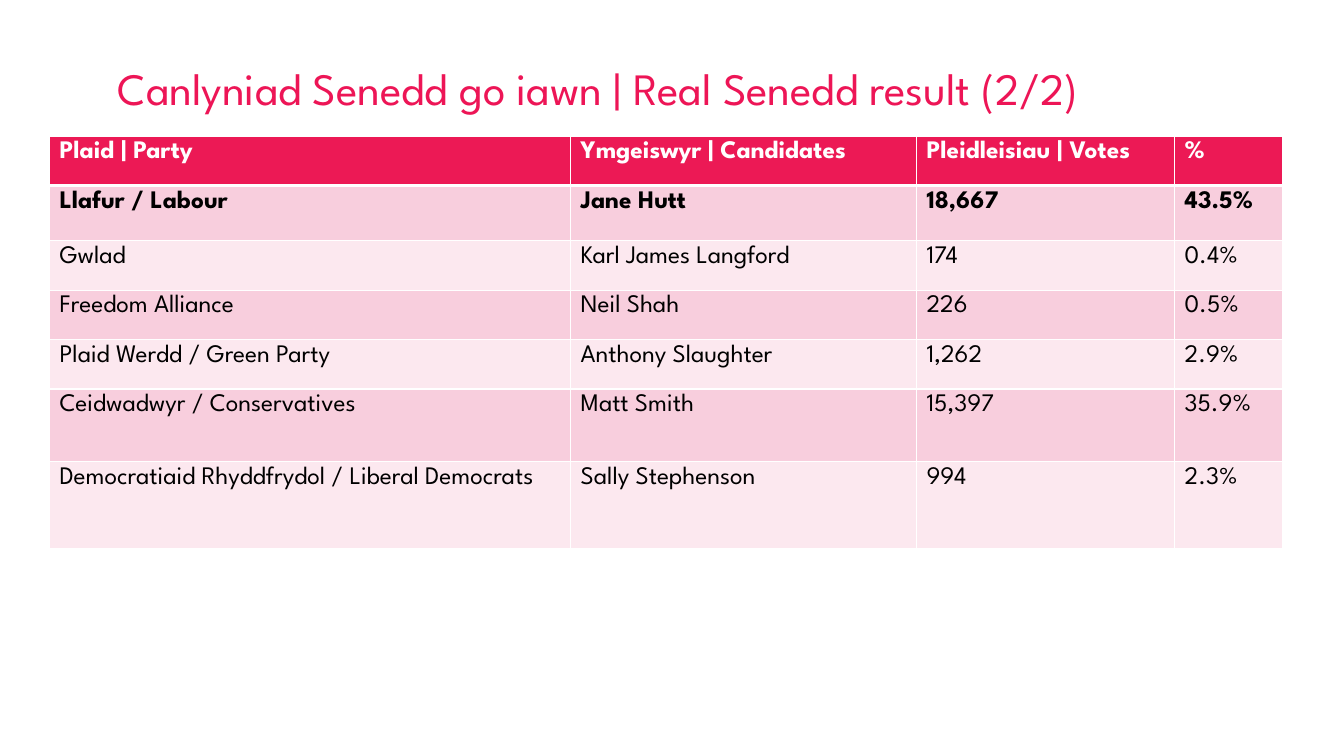
from lxml.etree import SubElement
from pptx import Presentation
from pptx.dml.color import RGBColor
from pptx.oxml.ns import qn
from pptx.util import Inches, Pt

FONT = "League Spartan"
BLACK, WHITE = "000000", "FFFFFF"
TITLE_PINK, HEADER_PINK = "ED1556", "EC1955"
ROW_PINKS = ("F8CEDD", "FCE8EF")

COLUMN_WIDTHS = (5.17, 3.43, 2.56, 1.07)
ROW_HEIGHTS = (0.49, 0.55, 0.49, 0.49, 0.49, 0.72, 0.86)
RESULTS = (
    ("Plaid | Party", "Ymgeiswyr | Candidates", "Pleidleisiau | Votes", "%"),
    ("Llafur / Labour", "Jane Hutt", "18,667", "43.5%"),
    ("Gwlad", "Karl James Langford", "174", "0.4%"),
    ("Freedom Alliance", "Neil Shah", "226", "0.5%"),
    ("Plaid Werdd / Green Party", "Anthony Slaughter", "1,262", "2.9%"),
    ("Ceidwadwyr / Conservatives", "Matt Smith", "15,397", "35.9%"),
    ("Democratiaid Rhyddfrydol / Liberal Democrats", "Sally Stephenson", "994", "2.3%"),
)


def color(hex_string):
    return RGBColor.from_string(hex_string)


def style_font(paragraph, size, hex_string, bold=False):
    font = paragraph.font
    font.name, font.size, font.bold = FONT, Pt(size), bold
    font.color.rgb = color(hex_string)


def add_title(slide, left, top, width, height):
    shape = slide.shapes.add_textbox(*map(Inches, (left, top, width, height)))
    frame = shape.text_frame
    frame.word_wrap = True
    frame.margin_left = frame.margin_top = frame.margin_right = frame.margin_bottom = 0
    paragraph = frame.paragraphs[0]
    paragraph.text = "Canlyniad Senedd go iawn | Real Senedd result (2/2)"
    paragraph.line_spacing = 0.9
    style_font(paragraph, 32, TITLE_PINK)


def set_borders(cell, bottom_width):
    properties = cell._tc.get_or_add_tcPr()
    for side, width in (("L", 1), ("R", 1), ("T", 1), ("B", bottom_width)):
        line = SubElement(properties, qn(f"a:ln{side}"), w=str(Pt(width)))
        fill = SubElement(line, qn("a:solidFill"))
        SubElement(fill, qn("a:srgbClr"), val=WHITE)


def add_results_table(slide, left, top):
    width, height = sum(COLUMN_WIDTHS), sum(ROW_HEIGHTS)
    table = slide.shapes.add_table(
        len(RESULTS), len(COLUMN_WIDTHS), *map(Inches, (left, top, width, height))
    ).table
    for column, column_width in zip(table.columns, COLUMN_WIDTHS):
        column.width = Inches(column_width)
    for row_index, (row, row_height) in enumerate(zip(table.rows, ROW_HEIGHTS)):
        row.height = Inches(row_height)
        is_header = row_index == 0
        row_fill = HEADER_PINK if is_header else ROW_PINKS[(row_index - 1) % 2]
        for cell, text in zip(row.cells, RESULTS[row_index]):
            cell.text = text
            # The header and the winning party are bold
            style_font(cell.text_frame.paragraphs[0], 18,
                       WHITE if is_header else BLACK, bold=row_index < 2)
            set_borders(cell, 3 if is_header else 1)
            cell.fill.solid()
            cell.fill.fore_color.rgb = color(row_fill)


def build_slide(presentation):
    slide = presentation.slides.add_slide(presentation.slide_layouts[6])
    slide.background.fill.solid()
    slide.background.fill.fore_color.rgb = color(WHITE)
    # Title
    add_title(slide, 1.17, 0.66, 11.84, 0.48)
    # Election results
    add_results_table(slide, 0.49, 1.35)


def main():
    presentation = Presentation()
    presentation.slide_width, presentation.slide_height = Inches(13.33), Inches(7.5)
    build_slide(presentation)
    presentation.save("out.pptx")


if __name__ == "__main__":
    main()
